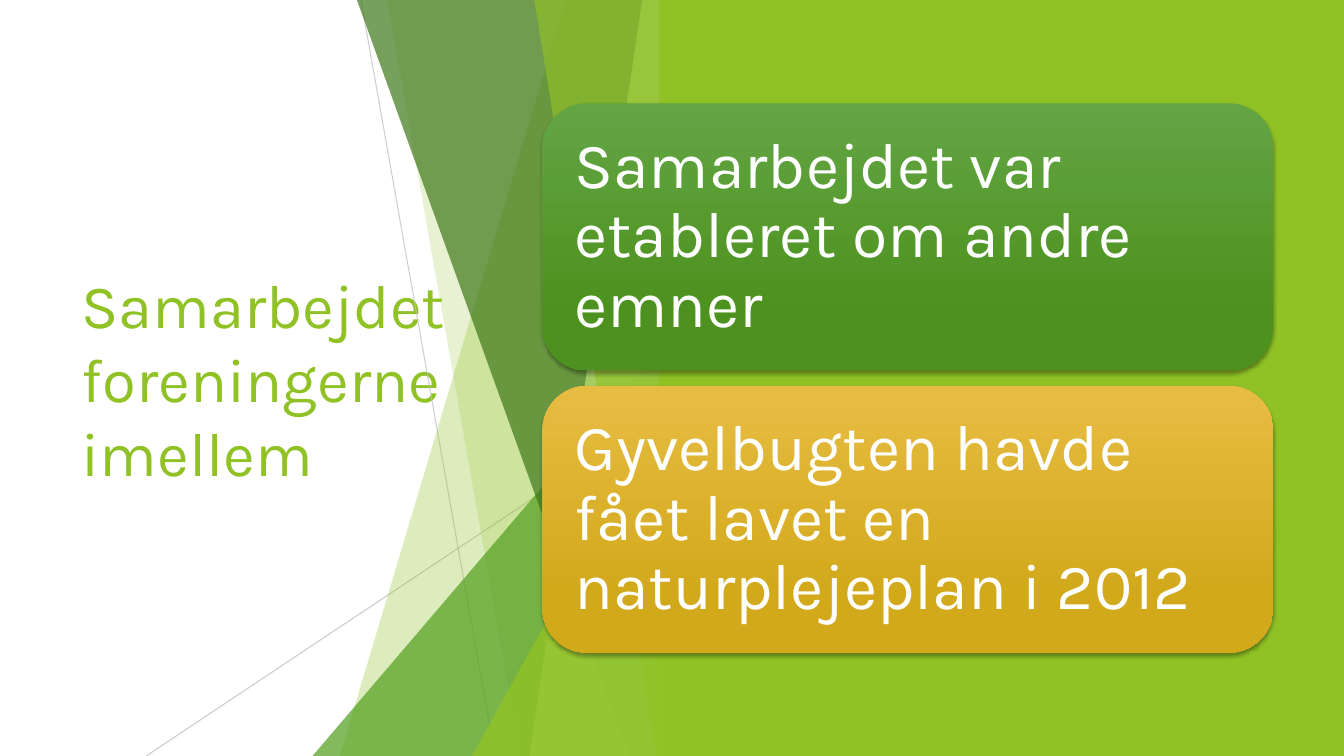
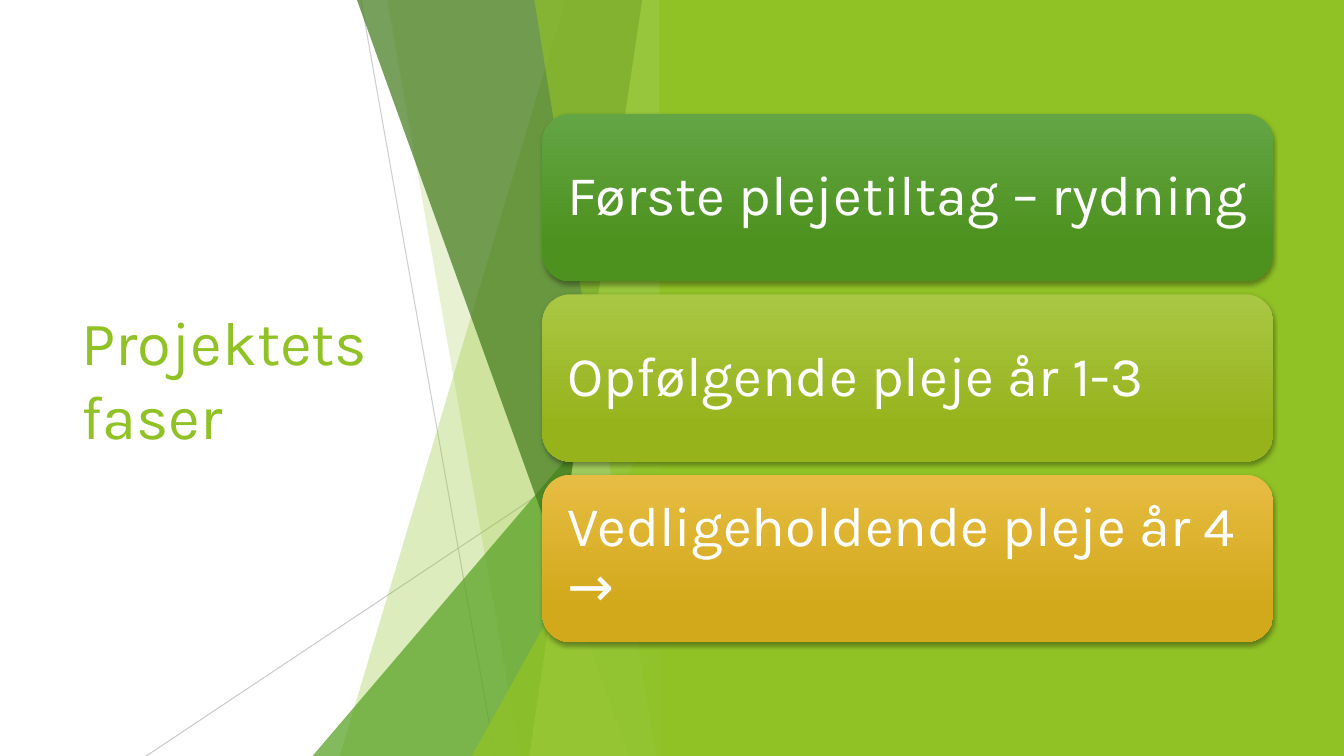
from lxml.etree import SubElement
from pptx import Presentation
from pptx.dml.color import RGBColor
from pptx.enum.shapes import MSO_CONNECTOR, MSO_SHAPE
from pptx.enum.text import MSO_ANCHOR, PP_ALIGN
from pptx.oxml.ns import qn
from pptx.util import Inches, Pt

WIDTH, HEIGHT = 13.33, 7.5
FONT = "Karla"
LIME, WHITE, GREY = "90C226", "FFFFFF", "BFBFBF"
GREEN_FADE = ("63A545", "4D921E")
LIME_FADE = ("AAC744", "97B31C")
GOLD_FADE = ("E7BC43", "D2A91B")

SLIDES = [
    {"title": "Samarbejdet foreningerne imellem",
     "height": 2.65, "gap": 0.15, "inset": 0.19, "size": 46,
     "panels": [("Samarbejdet var etableret om andre emner", GREEN_FADE),
                ("Gyvelbugten havde fået lavet en naturplejeplan i 2012", GOLD_FADE)]},
    {"title": "Projektets faser",
     "height": 1.66, "gap": 0.13, "inset": 0.17, "size": 40,
     "panels": [("Første plejetiltag – rydning", GREEN_FADE),
                ("Opfølgende pleje år 1-3", LIME_FADE),
                ("Vedligeholdende pleje år 4 →", GOLD_FADE)]},
]

TITLE_BOX = (0.71, 1.51, 3.88, 4.48)
PANEL_LEFT, PANEL_WIDTH = 5.38, 7.25
FACET_RIGHT, FIELD_LEFT = 6.66, 6.54
THIN_LINES = [((3.58, 0), (4.91, HEIGHT), 75),
              ((FACET_RIGHT, 4.03), (1.45, HEIGHT), 80)]
FACETS = [
    ("band", 5.61, 3.37, LIME, 30),
    ("band", 3.84, 5.16, LIME, 20),
    ("triangle", 3.1, 3.33, "54A021", 72),
    ("band", 3.54, 6.24, "3F7819", 70),
    ("band", 6.37, 5.25, "C0E474", 70),
    ("band", 5.3, 6.51, LIME, 65),
    ("triangle", 4.68, 3.93, LIME, 80),
]


def rgb(value):
    return RGBColor.from_string(value)


def box(*lengths):
    return [Inches(n) for n in lengths]


def set_alpha(parent, percent):
    for clr in parent.iter(qn("a:srgbClr")):
        SubElement(clr, qn("a:alpha"), val=str(percent * 1000))


def fill_flat(sp, color, alpha=100):
    sp.shadow.inherit = False
    sp.fill.solid()
    sp.fill.fore_color.rgb = rgb(color)
    sp.line.fill.background()
    if alpha < 100:
        set_alpha(sp.fill._xPr, alpha)


def write(sp, text, size, color, inset, spacing=1.0):
    tf = sp.text_frame
    frame = {"word_wrap": True, "vertical_anchor": MSO_ANCHOR.MIDDLE,
             "margin_left": Inches(inset[0]), "margin_right": Inches(inset[0]),
             "margin_top": Inches(inset[1]), "margin_bottom": Inches(inset[1])}
    for name, value in frame.items():
        setattr(tf, name, value)
    p = tf.paragraphs[0]
    p.alignment, p.line_spacing = PP_ALIGN.LEFT, spacing
    r = p.add_run()
    r.text = text
    for name, value in {"name": FONT, "size": Pt(size)}.items():
        setattr(r.font, name, value)
    r.font.color.rgb = rgb(color)


def add_thin_line(s, start, end, alpha):
    line = s.shapes.add_connector(MSO_CONNECTOR.STRAIGHT, *box(*start, *end))
    line.line.width = Pt(0.75)
    line.line.color.rgb = rgb(GREY)
    spPr = line._element.spPr
    set_alpha(spPr, alpha)
    SubElement(spPr, qn("a:effectLst"))


def add_band(s, top_x, bottom_x):
    outline = s.shapes.build_freeform(*box(top_x, 0))
    corners = [(FACET_RIGHT, 0), (FACET_RIGHT, HEIGHT), (bottom_x, HEIGHT)]
    outline.add_line_segments([box(*c) for c in corners], close=True)
    return outline.convert_to_shape()


def add_triangle(s, left, top):
    sp = s.shapes.add_shape(MSO_SHAPE.ISOSCELES_TRIANGLE,
                            *box(left, top, FACET_RIGHT - left, HEIGHT - top))
    sp.adjustments[0] = 1
    return sp


def add_backdrop(s):
    for start, end, alpha in THIN_LINES:
        add_thin_line(s, start, end, alpha)
    makers = {"band": add_band, "triangle": add_triangle}
    for kind, first, second, color, alpha in FACETS:
        fill_flat(makers[kind](s, first, second), color, alpha)
    field = s.shapes.add_shape(MSO_SHAPE.RECTANGLE,
                               *box(FIELD_LEFT, 0, WIDTH - FIELD_LEFT, HEIGHT))
    fill_flat(field, LIME)


def add_panel(s, top, height, fade):
    sp = s.shapes.add_shape(MSO_SHAPE.ROUNDED_RECTANGLE,
                            *box(PANEL_LEFT, top, PANEL_WIDTH, height))
    sp.line.fill.background()
    sp.fill.gradient()
    sp.fill.gradient_angle = 270
    for stop, color, position in zip(sp.fill.gradient_stops, fade, (0, 0.78)):
        stop.color.rgb = rgb(color)
        stop.position = position
    sp.shadow.inherit = False
    effects = sp._element.spPr.find(qn("a:effectLst"))
    shadow = SubElement(effects, qn("a:outerShdw"), blurRad=str(Pt(3)),
                        dist=str(Pt(2)), dir="5400000", rotWithShape="0")
    SubElement(shadow, qn("a:srgbClr"), val="000000")
    set_alpha(shadow, 35)
    return sp


def add_slide(prs, content):
    s = prs.slides.add_slide(prs.slide_layouts[6])
    title = s.shapes.add_textbox(*box(*TITLE_BOX))
    write(title, content["title"], 44, LIME, (0.1, 0.05))
    add_backdrop(s)
    height, gap, inset = content["height"], content["gap"], content["inset"]
    pitch = height + gap
    first_top = (HEIGHT - pitch * len(content["panels"]) + gap) / 2
    for i, (text, fade) in enumerate(content["panels"]):
        panel = add_panel(s, first_top + i * pitch, height, fade)
        write(panel, text, content["size"], WHITE, (inset, inset), 0.9)


def main():
    prs = Presentation()
    prs.slide_width, prs.slide_height = box(WIDTH, HEIGHT)
    for content in SLIDES:
        add_slide(prs, content)
    prs.save("out.pptx")


if __name__ == "__main__":
    main()
